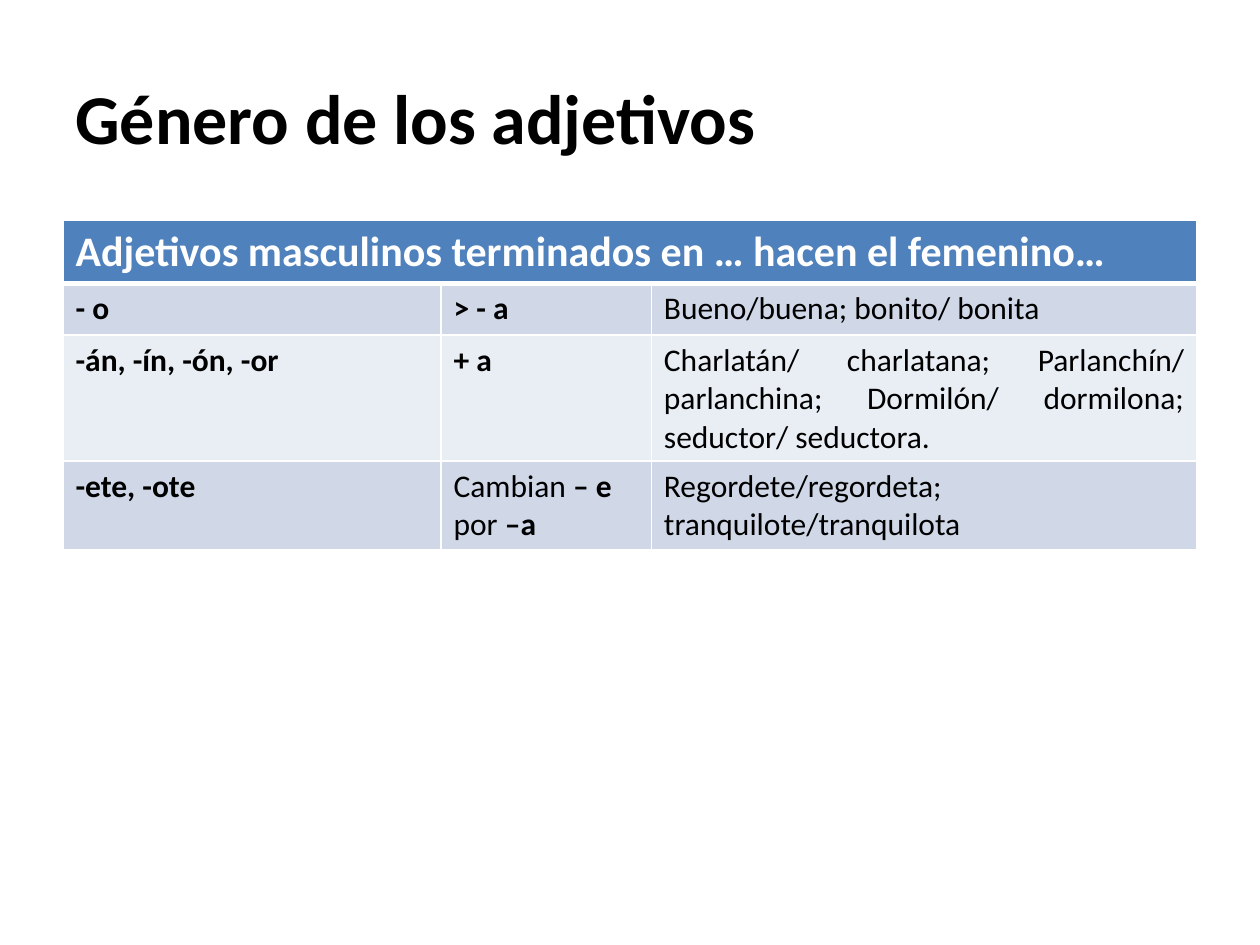
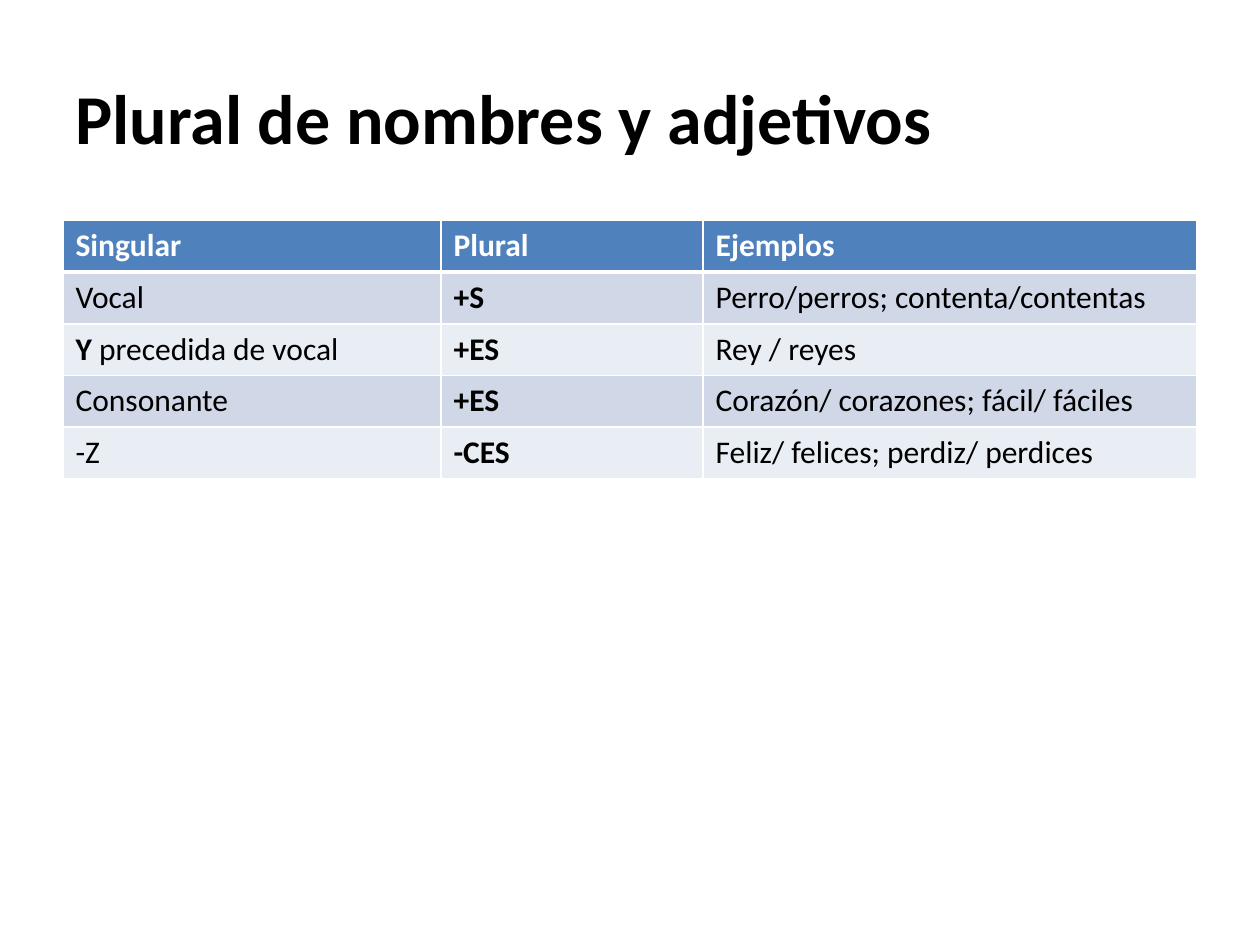
from lxml.etree import SubElement
from pptx import Presentation
from pptx.dml.color import RGBColor
from pptx.enum.text import MSO_ANCHOR, PP_ALIGN
from pptx.oxml.ns import qn
from pptx.util import Inches, Pt

# Shared style
FONT = "Calibri"
BLACK, WHITE = "000000", "FFFFFF"
HEADER_FILL = "4F81BD"
BAND_FILLS = ["E9EDF4", "D0D8E8"]
LEFT, WIDTH = 0.5, 9
ROW_HEIGHT = 0.41

# Each slide: title, column widths, header size, rows; *asterisks* mark bold
SLIDES = [
    ("Género de los adjetivos", [3, 1.67, 4.33], 24, [
        ["*Adjetivos masculinos terminados en … hacen el femenino…*"],
        ["*- o*", "*> - a*", "Bueno/buena; bonito/ bonita"],
        ["*-án, -ín, -ón, -or*", "*+ a*",
         "Charlatán/ charlatana; Parlanchín/ parlanchina; "
         "Dormilón/ dormilona; seductor/ seductora."],
        ["*-ete, -ote*", "Cambian *– e *por *–a*",
         "Regordete/regordeta; tranquilote/tranquilota"],
    ]),
    ("Plural de nombres y adjetivos", [3, 2.08, 3.92], 18, [
        ["*Singular*", "*Plural*", "*Ejemplos*"],
        ["Vocal", "*+S*", "Perro/perros; contenta/contentas"],
        ["*Y* precedida de vocal", "*+ES*", "Rey / reyes"],
        ["Consonante", "*+ES*", "Corazón/ corazones; fácil/ fáciles"],
        ["-Z", "*-CES*", "Feliz/ felices; perdiz/ perdices"],
    ]),
]
JUSTIFIED_STARTS = ("Charlatán", "Regordete")


def write_text(paragraph, text, size, color):
    """Write text, with the parts between asterisks in bold."""
    for index, part in enumerate(text.split("*")):
        if part:
            run = paragraph.add_run()
            run.text = part
            run.font.name = FONT
            run.font.size = Pt(size)
            run.font.bold = index % 2 == 1
            run.font.color.rgb = RGBColor.from_string(color)


def set_borders(cell, top, bottom):
    """Give a cell white borders; they must come before its fill."""
    properties = cell._tc.get_or_add_tcPr()
    widths = {"a:lnL": 1, "a:lnR": 1, "a:lnT": top, "a:lnB": bottom}
    for tag, points in widths.items():
        line = SubElement(properties, qn(tag), w=str(Pt(points)))
        fill = SubElement(line, qn("a:solidFill"))
        SubElement(fill, qn("a:srgbClr"), val=WHITE)


presentation = Presentation()
presentation.slide_width = Inches(10)
presentation.slide_height = Inches(7.5)

for title, column_widths, header_size, rows in SLIDES:
    slide = presentation.slides.add_slide(presentation.slide_layouts[6])

    # Title
    title_box = slide.shapes.add_textbox(
        Inches(LEFT), Inches(0.3), Inches(WIDTH), Inches(1.25))
    title_box.text_frame.word_wrap = True
    title_box.text_frame.vertical_anchor = MSO_ANCHOR.MIDDLE
    write_text(title_box.text_frame.paragraphs[0], f"*{title}*", 40, BLACK)

    # Table
    table = slide.shapes.add_table(
        len(rows), len(column_widths), Inches(LEFT), Inches(1.75),
        Inches(WIDTH), Inches(ROW_HEIGHT * len(rows))).table
    for column, width in zip(table.columns, column_widths):
        column.width = Inches(width)

    for row_index, row in enumerate(rows):
        is_header = row_index == 0
        table.rows[row_index].height = Inches(ROW_HEIGHT)
        for column_index in range(len(column_widths)):
            cell = table.cell(row_index, column_index)
            set_borders(cell, 3 if row_index == 1 else 1, 3 if is_header else 1)
            cell.fill.solid()
            cell.fill.fore_color.rgb = RGBColor.from_string(
                HEADER_FILL if is_header else BAND_FILLS[row_index % 2])
        for column_index, text in enumerate(row):
            paragraph = table.cell(row_index, column_index).text_frame.paragraphs[0]
            write_text(paragraph, text, header_size if is_header else 18,
                       WHITE if is_header else BLACK)
            if text.startswith(JUSTIFIED_STARTS):
                paragraph.alignment = PP_ALIGN.JUSTIFY

    # A single header text spans every column
    if len(rows[0]) == 1:
        table.cell(0, 0).merge(table.cell(0, len(column_widths) - 1))

presentation.save("out.pptx")
